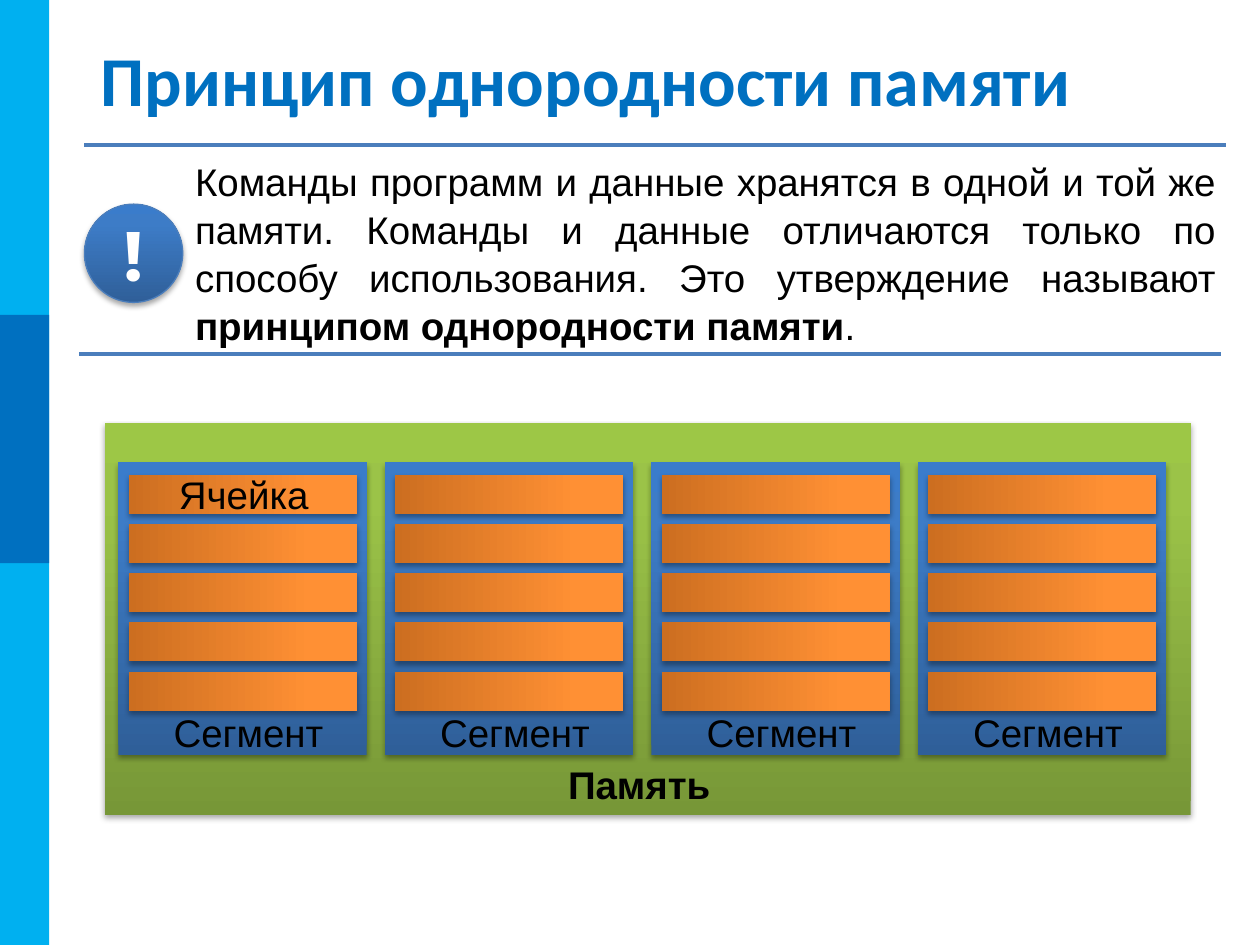
from copy import deepcopy
from dataclasses import dataclass

from pptx import Presentation
from pptx.dml.color import RGBColor
from pptx.enum.shapes import MSO_CONNECTOR as Connector, MSO_SHAPE as Shape
from pptx.enum.text import MSO_ANCHOR as Anchor, PP_ALIGN as Align
from pptx.oxml import parse_xml
from pptx.oxml.ns import nsdecls, qn
from pptx.util import Inches, Pt


@dataclass(frozen=True)
class Theme:
    sky: str = "00B0F0"
    blue: str = "0070C0"
    rule: str = "4B7EBC"
    black: str = "000000"
    white: str = "FFFFFF"
    # Gradients run from the bottom to the top
    segment: tuple = ("2F5F99", "3D7CC7", "3A7CCB")
    memory: tuple = ("779737", "9BC348", "9DC746")
    cell: tuple = ("CC6E20", "FF9034", "FF9136")
    stops: tuple = (0, 0.8, 1)
    title_size: int = 40
    body_size: int = 22
    title_font: str = "Calibri"
    body_font: str = "Arial"
    mark_font: str = "Montserrat"


SHADOW = (
    f'<a:effectLst {nsdecls("a")}><a:outerShdw blurRad="40000" dist="23000" '
    'dir="5400000" rotWithShape="0"><a:srgbClr val="000000">'
    '<a:alpha val="35000"/></a:srgbClr></a:outerShdw></a:effectLst>'
)
NO_EFFECTS = f'<a:effectLst {nsdecls("a")}/>'


def set_all(target, values):
    for name, value in values.items():
        setattr(target, name, value)


class SlideBuilder:
    """Draws on a grid of 100 columns by 75 rows, each 0.1 inch."""

    def __init__(self, presentation, theme):
        self.theme = theme
        self.slide = presentation.slides.add_slide(presentation.slide_layouts[6])

    def grid(self, *units):
        return [Inches(unit / 10) for unit in units]

    def panel(self, box, fill, kind=Shape.RECTANGLE, line=None, rotation=0):
        shape = self.slide.shapes.add_shape(kind, *self.grid(*box))
        shape.rotation = rotation
        if line:
            shape.line.color.rgb = RGBColor.from_string(line)
            shape.line.width = Pt(0.75)
        else:
            shape.line.fill.background()
        if isinstance(fill, str):
            shape.shadow.inherit = False
            shape.fill.solid()
            shape.fill.fore_color.rgb = RGBColor.from_string(fill)
        else:
            self.gradient(shape, fill)
            shape._element.spPr.append(parse_xml(SHADOW))
        return shape

    def gradient(self, shape, colors):
        shape.fill.gradient()
        shape.fill.gradient_angle = 90
        stop_list = shape._element.spPr.find(qn("a:gradFill")).find(qn("a:gsLst"))
        stop_list.append(deepcopy(stop_list[-1]))
        for stop, color, position in zip(
            shape.fill.gradient_stops, colors, self.theme.stops
        ):
            stop.color.rgb = RGBColor.from_string(color)
            stop.position = position

    def rule(self, left, top, width):
        line = self.slide.shapes.add_connector(
            Connector.STRAIGHT, *self.grid(left, top, left + width, top)
        )
        line.line.color.rgb = RGBColor.from_string(self.theme.rule)
        line.line.width = Pt(2.25)
        line._element.spPr.append(parse_xml(NO_EFFECTS))

    def label(self, shape, runs, anchor=Anchor.TOP, align=Align.LEFT,
              font=None, size=None, color=None, spacing=None):
        """Fill a shape with one paragraph of (text, bold) runs."""
        set_all(shape.text_frame, {"word_wrap": True, "vertical_anchor": anchor})
        paragraph = shape.text_frame.paragraphs[0]
        set_all(paragraph, {"alignment": align, "line_spacing": spacing})
        for text, bold in runs:
            run = paragraph.add_run()
            run.text = text
            set_all(run.font, {
                "name": font or self.theme.body_font,
                "size": Pt(size or self.theme.body_size),
                "bold": bold,
            })
            run.font.color.rgb = RGBColor.from_string(color or self.theme.black)

    def text(self, box, runs, **style):
        shape = self.slide.shapes.add_textbox(*self.grid(*box))
        self.label(shape, runs, **style)


def main():
    theme = Theme()
    presentation = Presentation()
    set_all(presentation, {"slide_width": Inches(10), "slide_height": Inches(7.5)})
    builder = SlideBuilder(presentation, theme)

    # Side band
    builder.panel((0, 0, 3.9, 75), theme.sky)
    builder.panel((0, 25, 3.9, 19.7), theme.blue)

    # Title
    heading = {"size": theme.title_size, "anchor": Anchor.MIDDLE}
    builder.text((7, 3, 90.2, 6.4), [("Принцип однородности памяти", True)],
                 font=theme.title_font, color=theme.blue, **heading)

    # Statement between two rules
    mark = builder.panel((6.7, 16.2, 7.8, 7.8), theme.segment,
                         kind=Shape.OVAL, line=theme.rule)
    builder.label(mark, [("!", True)], align=Align.CENTER,
                  font=theme.mark_font, color=theme.white, **heading)
    builder.rule(6.7, 11.5, 90.6)
    builder.rule(6.3, 28.1, 90.6)
    builder.text((14.5, 11.9, 83, 19.7), [
        ("Команды программ и данные хранятся в одной и той же памяти. "
         "Команды и данные отличаются только по способу использования. "
         "Это утверждение называют ", False),
        ("принципом однородности памяти", True),
        (".", False),
    ], align=Align.JUSTIFY, spacing=1.04)

    # Memory
    builder.panel((8.3, 33.6, 86.2, 31.1), theme.memory)
    builder.text((44.1, 59.9, 16.8, 4.7), [("Память", True)])

    # Segments, each with a column of cells turned on their side
    for segment in range(4):
        left = 9.4 + 21.15 * segment
        builder.panel((left, 36.7, 19.7, 23.2), theme.segment)
        for cell in range(5):
            builder.panel((left + 8.3, 30.2 + 3.9 * cell, 3.1, 18.1),
                          theme.cell, rotation=90)
        builder.text((left + 3.4, 55.8, 15, 4.7), [("Сегмент", False)])
    builder.text((10.3, 36.9, 18.1, 4.7), [("Ячейка", False)], align=Align.CENTER)

    presentation.save("out.pptx")


if __name__ == "__main__":
    main()
